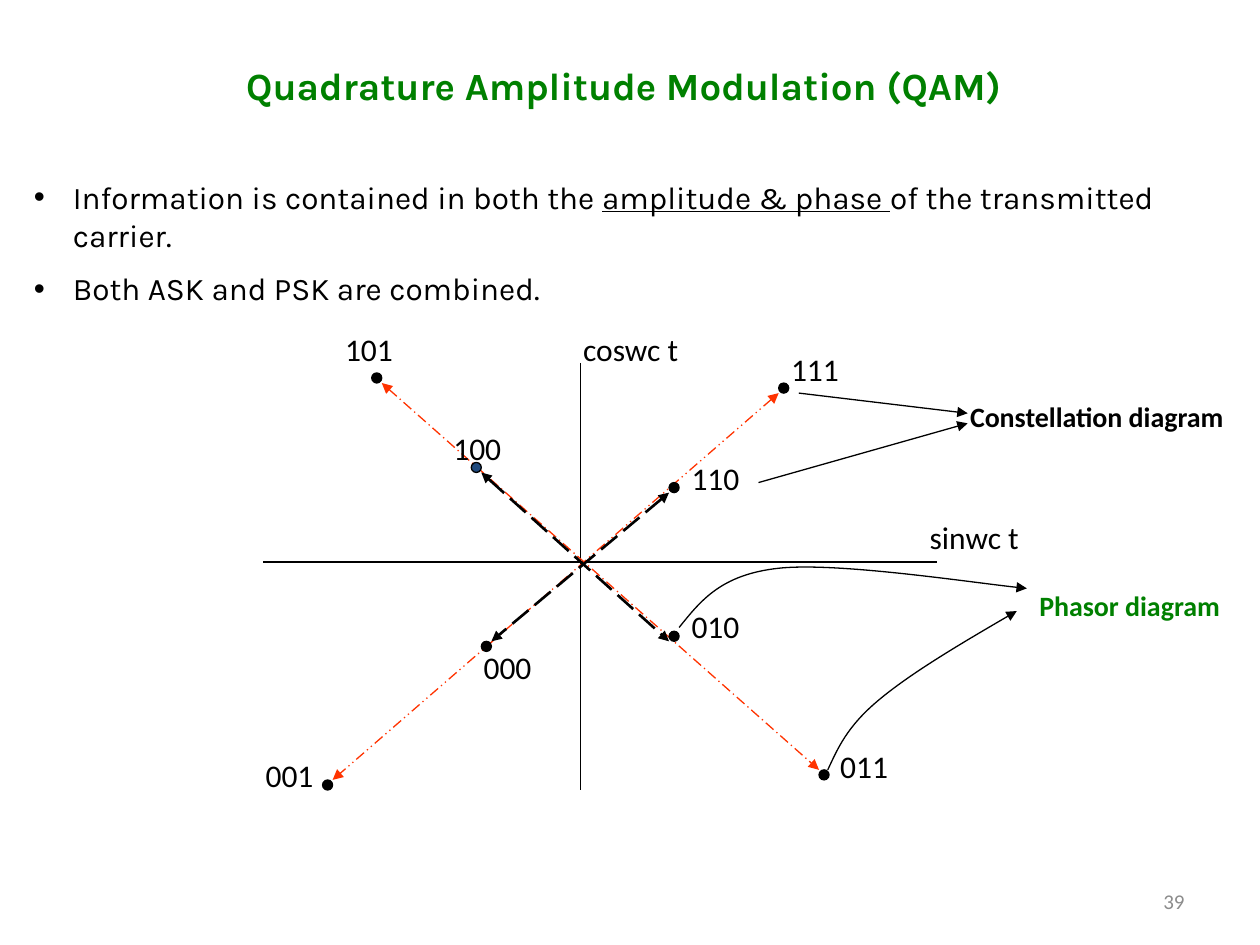
from lxml import etree
from pptx import Presentation
from pptx.dml.color import RGBColor
from pptx.enum.dml import MSO_LINE
from pptx.enum.shapes import MSO_CONNECTOR, MSO_SHAPE
from pptx.enum.text import MSO_ANCHOR, PP_ALIGN
from pptx.oxml.ns import qn
from pptx.util import Inches, Pt

BLACK = RGBColor(0x00, 0x00, 0x00)
GREEN = RGBColor(0x00, 0x80, 0x00)
ORANGE = RGBColor(0xFF, 0x33, 0x00)
NAVY = RGBColor(0x1F, 0x49, 0x7D)
GRAY = RGBColor(0x8C, 0x8C, 0x8C)

STRAIGHT = MSO_CONNECTOR.STRAIGHT
DOT = MSO_SHAPE.FLOWCHART_CONNECTOR
LONG_DASH = MSO_LINE.LONG_DASH
DASH_DOT = MSO_LINE.LONG_DASH_DOT
DASH_DOT_DOT = MSO_LINE.DASH_DOT_DOT
LEFT, CENTER, RIGHT = PP_ALIGN.LEFT, PP_ALIGN.CENTER, PP_ALIGN.RIGHT
TOP, MIDDLE = MSO_ANCHOR.TOP, MSO_ANCHOR.MIDDLE

DOT_SIZE = 0.08
LABEL_HEIGHT = 0.4

# code, dot position, label position, dot fill
CONSTELLATION = [
    ("111", (6.18, 3.04), (6.18, 2.73), BLACK),
    ("101", (2.95, 2.96), (2.64, 2.57), BLACK),
    ("110", (5.31, 3.83), (5.39, 3.59), BLACK),
    ("000", (3.82, 5.09), (3.74, 5.09), BLACK),
    ("010", (5.31, 5.01), (5.39, 4.77), BLACK),
    ("100", (3.74, 3.67), (3.50, 3.36), NAVY),
    ("001", (2.56, 6.19), (2.01, 5.95), BLACK),
    ("011", (6.50, 6.11), (6.57, 5.88), BLACK),
]
AXES = [((4.61, 2.88), (4.61, 6.27)), ((2.09, 4.46), (7.44, 4.46))]
PHASORS = [
    ((3.03, 3.04), (6.50, 6.11), ORANGE, 0.75, DASH_DOT),
    ((6.18, 3.12), (2.64, 6.19), ORANGE, 0.75, DASH_DOT_DOT),
    ((3.82, 3.75), (5.31, 5.09), BLACK, 1.5, LONG_DASH),
    ((5.31, 3.91), (3.90, 5.09), BLACK, 1.5, LONG_DASH),
]
CONSTELLATION_POINTERS = [((6.02, 3.83), (7.68, 3.36)),
                          ((6.34, 3.12), (7.68, 3.28))]
# start point, then two control points and an end point per curve segment
PHASOR_POINTERS = [
    [(5.39, 4.98), (5.56, 4.77), (5.72, 4.56), (6.18, 4.51),
     (6.64, 4.46), (7.82, 4.64), (8.15, 4.67)],
    [(6.57, 6.11), (6.65, 5.94), (6.72, 5.77), (6.97, 5.56),
     (7.22, 5.35), (7.64, 5.10), (8.07, 4.85)],
]


def format_run(run, size, color, font="Calibri", bold=False):
    run.font.name = font
    run.font.size = Pt(size)
    run.font.bold = bold
    run.font.color.rgb = color


def add_box(slide, position, width, height):
    left, top = position
    box = slide.shapes.add_textbox(Inches(left), Inches(top),
                                   Inches(width), Inches(height))
    box.text_frame.word_wrap = True
    return box.text_frame


def add_label(slide, text, position, width, height=LABEL_HEIGHT, size=18,
              color=BLACK, bold=False, align=LEFT, anchor=TOP):
    frame = add_box(slide, position, width, height)
    frame.text = text
    frame.vertical_anchor = anchor
    paragraph = frame.paragraphs[0]
    paragraph.alignment = align
    format_run(paragraph.runs[0], size, color, bold=bold)


def add_bullet(frame, pieces, space_before):
    """Add a bulleted paragraph from (text, underlined) pieces."""
    paragraph = frame.add_paragraph()
    paragraph.space_before = Pt(space_before)
    properties = paragraph._p.get_or_add_pPr()
    properties.set("marL", str(Inches(0.31)))
    properties.set("indent", str(-Inches(0.31)))
    etree.SubElement(properties, qn("a:buFont"), typeface="Arial")
    etree.SubElement(properties, qn("a:buChar"), char="•")
    for text, underlined in pieces:
        run = paragraph.add_run()
        run.text = text
        format_run(run, 18, BLACK, "Karla")
        run.font.underline = underlined


def add_body(slide):
    frame = add_box(slide, (0.17, 0.44), 9.56, 6.38)
    frame.text = "Quadrature Amplitude Modulation (QAM)"
    title = frame.paragraphs[0]
    title.alignment = CENTER
    format_run(title.runs[0], 22, GREEN, "Karla", bold=True)
    add_bullet(frame, [("Information is contained in both the ", False),
                       ("amplitude & phase ", True),
                       ("of the transmitted carrier.", False)], 40)
    add_bullet(frame, [("Both ASK and PSK are combined.", False)], 9)


def style_line(shape, color, width, dash=None, arrows=()):
    """Format a line; arrows names the ends ("head", "tail") to point."""
    shape.line.color.rgb = color
    shape.line.width = Pt(width)
    if dash:
        shape.line.dash_style = dash
    outline = shape._element.spPr.find(qn("a:ln"))
    for end in arrows:
        etree.SubElement(outline, qn(f"a:{end}End"), type="triangle")


def add_line(slide, start, end, color=BLACK, width=0.75, dash=None, arrows=()):
    line = slide.shapes.add_connector(
        STRAIGHT, *[Inches(value) for value in (*start, *end)])
    style_line(line, color, width, dash, arrows)
    etree.SubElement(line._element.spPr, qn("a:effectLst"))


def add_curved_arrow(slide, points):
    start, *others = [(Inches(x), Inches(y)) for x, y in points]
    builder = slide.shapes.build_freeform(*start)
    builder.add_line_segments(others, close=False)
    arrow = builder.convert_to_shape()
    arrow.shadow.inherit = False
    arrow.fill.background()
    style_line(arrow, BLACK, 0.75, arrows=("tail",))
    # Each three straight segments become one cubic Bézier segment.
    segments = list(arrow._element.iter(qn("a:lnTo")))
    for first in range(0, len(segments), 3):
        group = segments[first:first + 3]
        curve = etree.Element(qn("a:cubicBezTo"))
        group[0].addprevious(curve)
        for segment in group:
            curve.append(segment[0])
            segment.getparent().remove(segment)


def add_dot(slide, position, color):
    left, top = position
    dot = slide.shapes.add_shape(DOT, Inches(left), Inches(top),
                                 Inches(DOT_SIZE), Inches(DOT_SIZE))
    dot.shadow.inherit = False
    dot.fill.solid()
    dot.fill.fore_color.rgb = color
    style_line(dot, BLACK, 0.75)


def main():
    deck = Presentation()
    deck.slide_width, deck.slide_height = Inches(10), Inches(7.5)
    slide = deck.slides.add_slide(deck.slide_layouts[6])

    add_body(slide)
    for start, end in AXES:
        add_line(slide, start, end)
    for phasor in PHASORS:
        add_line(slide, *phasor, arrows=("head", "tail"))
    for code, dot_position, label_position, color in CONSTELLATION:
        add_dot(slide, dot_position, color)
        add_label(slide, code, label_position, 0.63)
    for points in PHASOR_POINTERS:
        add_curved_arrow(slide, points)
    for start, end in CONSTELLATION_POINTERS:
        add_line(slide, start, end, arrows=("tail",))

    add_label(slide, "sinwc t", (7.28, 4.06), 1.18)
    add_label(slide, "coswc t", (4.53, 2.57), 1.18)
    add_label(slide, "Phasor diagram", (8.15, 4.62), 1.97, 0.37,
              size=16, color=GREEN, bold=True)
    add_label(slide, "Constellation diagram", (7.6, 3.12), 2.68, 0.37,
              size=16, bold=True)
    add_label(slide, "39", (7.17, 6.95), 2.33, size=12, color=GRAY,
              align=RIGHT, anchor=MIDDLE)
    deck.save("out.pptx")


if __name__ == "__main__":
    main()
